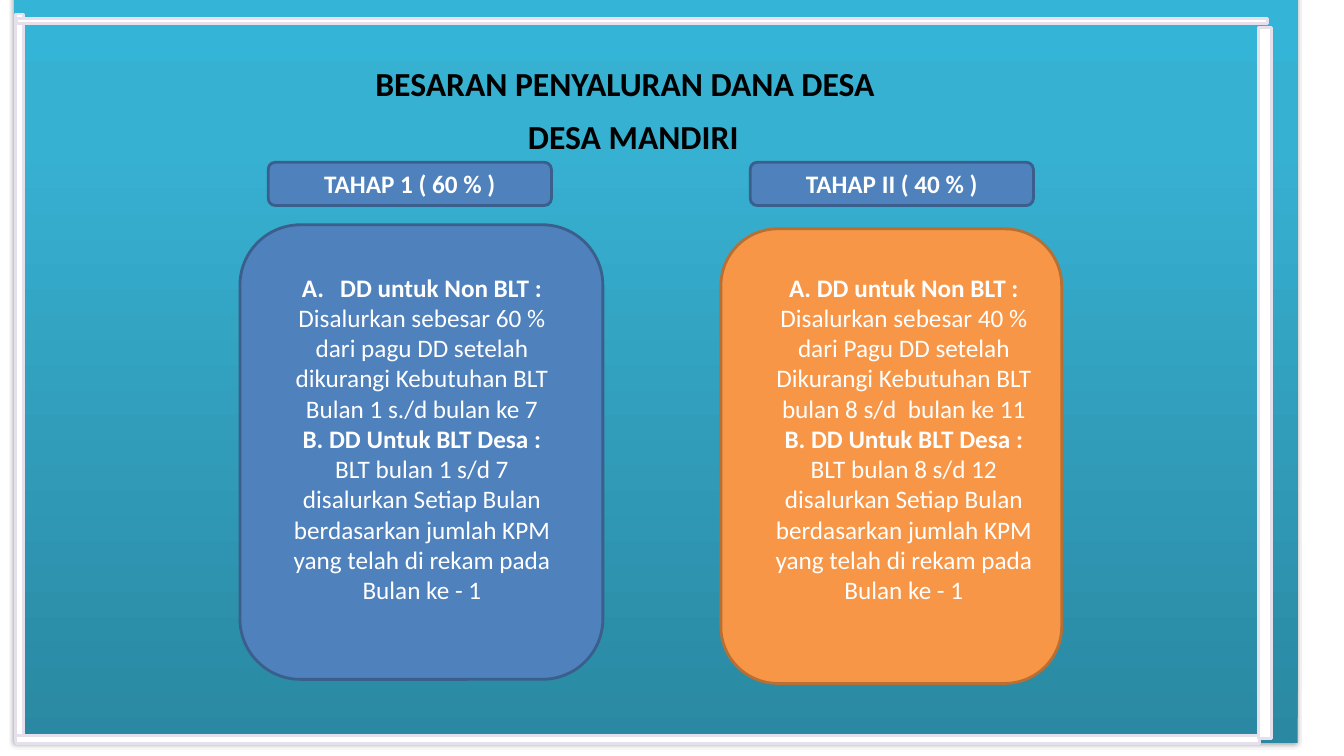
"""Build the slide on the village fund distribution in two stages."""
from copy import deepcopy
from dataclasses import dataclass

from lxml import etree
from pptx import Presentation
from pptx.dml.color import RGBColor
from pptx.enum.shapes import MSO_SHAPE
from pptx.enum.text import MSO_ANCHOR, MSO_AUTO_SIZE, PP_ALIGN
from pptx.oxml.ns import qn
from pptx.util import Inches, Pt

RECTANGLE = MSO_SHAPE.RECTANGLE
ROUNDED = MSO_SHAPE.ROUNDED_RECTANGLE
CENTER = PP_ALIGN.CENTER
TOP = MSO_ANCHOR.TOP
MIDDLE = MSO_ANCHOR.MIDDLE
GROW = MSO_AUTO_SIZE.SHAPE_TO_FIT_TEXT
TITLE_ONLY = 5


@dataclass(frozen=True)
class Theme:
    font: str = "Calibri"
    title_size: int = 24
    body_size: int = 18
    line_width: int = 2
    black: str = "000000"
    white: str = "FFFFFF"
    frame_line: str = "E6E0EC"
    blue: str = "4F81BD"
    blue_line: str = "3A5F8C"
    orange: str = "F79646"
    orange_line: str = "B76F34"
    backdrop: tuple = ((0, "2A88A2"), (0.8, "37B1D2"), (1, "34B4D6"))


class SlideBuilder:
    def __init__(self, presentation, theme):
        self.theme = theme
        self.slide = presentation.slides.add_slide(presentation.slide_layouts[TITLE_ONLY])

    def box(self, kind, position, fill, line):
        shape = self.slide.shapes.add_shape(kind, *map(Inches, position))
        shape.shadow.inherit = False
        shape.fill.solid()
        shape.fill.fore_color.rgb = RGBColor.from_string(fill)
        shape.line.color.rgb = RGBColor.from_string(line)
        shape.line.width = Pt(self.theme.line_width)
        return shape

    def backdrop(self, position):
        shape = self.slide.shapes.add_shape(RECTANGLE, *map(Inches, position))
        shape.line.fill.background()
        shape.fill.gradient()
        shape.fill.gradient_angle = 90
        stop_list = shape._element.spPr.find(".//" + qn("a:gsLst"))
        stop_list.append(deepcopy(stop_list[-1]))
        for stop, (place, color) in zip(shape.fill.gradient_stops, self.theme.backdrop):
            stop.position = place
            stop.color.rgb = RGBColor.from_string(color)
        shape.shadow.inherit = False
        effects = shape._element.spPr.find(qn("a:effectLst"))
        shadow = etree.SubElement(effects, qn("a:outerShdw"), blurRad=str(Pt(3.1)),
                                  dist=str(Pt(1.8)), dir="5400000", rotWithShape="0")
        color = etree.SubElement(shadow, qn("a:srgbClr"), val=self.theme.black)
        etree.SubElement(color, qn("a:alpha"), val="35000")

    def fill_text(self, shape, lines, size, color, numbered=False, **frame_format):
        frame = shape.text_frame
        for name, value in {"word_wrap": True, **frame_format}.items():
            setattr(frame, name, value)
        for index, (text, bold) in enumerate(lines):
            paragraph = frame.paragraphs[0] if index == 0 else frame.add_paragraph()
            paragraph.alignment = CENTER
            if numbered and index == 0:
                self.number(paragraph)
            run = paragraph.add_run()
            run.text = text
            font_format = {"name": self.theme.font, "size": Pt(size), "bold": bold}
            for name, value in font_format.items():
                setattr(run.font, name, value)
            run.font.color.rgb = RGBColor.from_string(color)

    def number(self, paragraph):
        properties = paragraph._p.get_or_add_pPr()
        properties.set("marL", str(Inches(0.38)))
        properties.set("indent", str(Inches(-0.38)))
        etree.SubElement(properties, qn("a:buFont"), typeface="+mj-lt")
        etree.SubElement(properties, qn("a:buAutoNum"), type="alphaUcPeriod")

    def heading(self, shape, position, text, inset):
        places = dict(zip(("left", "top", "width", "height"), map(Inches, position)))
        for name, value in places.items():
            setattr(shape, name, value)
        self.fill_text(shape, [(text, True)], self.theme.title_size, self.theme.black,
                       margin_left=Inches(inset), vertical_anchor=TOP, auto_size=GROW)

    def title(self, position, text, inset):
        shape = self.slide.shapes.title
        self.slide.shapes._spTree.append(shape._element)
        self.heading(shape, position, text, inset)

    def subtitle(self, position, text, inset):
        shape = self.slide.shapes.add_textbox(*map(Inches, position))
        self.heading(shape, position, text, inset)

    def stage_label(self, position, text):
        shape = self.box(ROUNDED, position, self.theme.blue, self.theme.blue_line)
        self.fill_text(shape, [(text, True)], self.theme.body_size, self.theme.white,
                       vertical_anchor=MIDDLE)

    def stage_text(self, position, lines, numbered):
        shape = self.slide.shapes.add_textbox(*map(Inches, position))
        self.fill_text(shape, lines, self.theme.body_size, self.theme.white, numbered,
                       auto_size=GROW)


def main():
    theme = Theme()
    presentation = Presentation()
    presentation.slide_width = Inches(13.33)
    presentation.slide_height = Inches(7.5)
    builder = SlideBuilder(presentation, theme)

    builder.backdrop((0.14, -0.13, 12.73, 7.5))
    frame_bars = (
        (0.15, 0.14, 0.08, 7.23),
        (0.16, 0.18, 12.41, 0.05),
        (0.16, 7.3, 12.33, 0.08),
        (12.48, 0.27, 0.13, 7.06),
    )
    for position in frame_bars:
        builder.box(RECTANGLE, position, theme.white, theme.frame_line)

    builder.title((1.06, 0.57, 9.54, 0.5), "BESARAN PENYALURAN DANA DESA", 0.84)
    builder.subtitle((1.06, 1.1, 9.54, 0.5), "DESA MANDIRI", 1)

    stages = (
        {"label": "TAHAP 1 ( 60 % )", "label_left": 2.66, "text_left": 2.78,
         "panel": (2.38, 2.23, 3.6, 4.51), "colors": (theme.blue, theme.blue_line),
         "numbered": True, "height": 3.43, "first": "DD untuk Non BLT :",
         "share": "Disalurkan sebesar 60 % dari pagu DD setelah dikurangi "
                  "Kebutuhan BLT Bulan 1 s./d bulan ke 7",
         "months": "1 s/d 7"},
        {"label": "TAHAP II ( 40 % )", "label_left": 7.44, "text_left": 7.56,
         "panel": (7.15, 2.27, 3.38, 4.51), "colors": (theme.orange, theme.orange_line),
         "numbered": False, "height": 3.74, "first": "A. DD untuk Non BLT :",
         "share": "Disalurkan sebesar 40 % dari Pagu DD setelah Dikurangi "
                  "Kebutuhan BLT bulan 8 s/d  bulan ke 11",
         "months": "8 s/d 12"},
    )
    for stage in stages:
        builder.box(ROUNDED, stage["panel"], *stage["colors"])
    for stage in stages:
        builder.stage_label((stage["label_left"], 1.61, 2.81, 0.43), stage["label"])
    for stage in stages:
        lines = (
            (stage["first"], True),
            (stage["share"], False),
            ("B. DD Untuk BLT Desa :", True),
            (f"BLT bulan {stage['months']} disalurkan Setiap Bulan berdasarkan "
             "jumlah KPM yang telah di rekam pada Bulan ke - 1", False),
        )
        builder.stage_text((stage["text_left"], 2.65, 2.81, stage["height"]),
                           lines, stage["numbered"])

    presentation.save("out.pptx")


if __name__ == "__main__":
    main()
